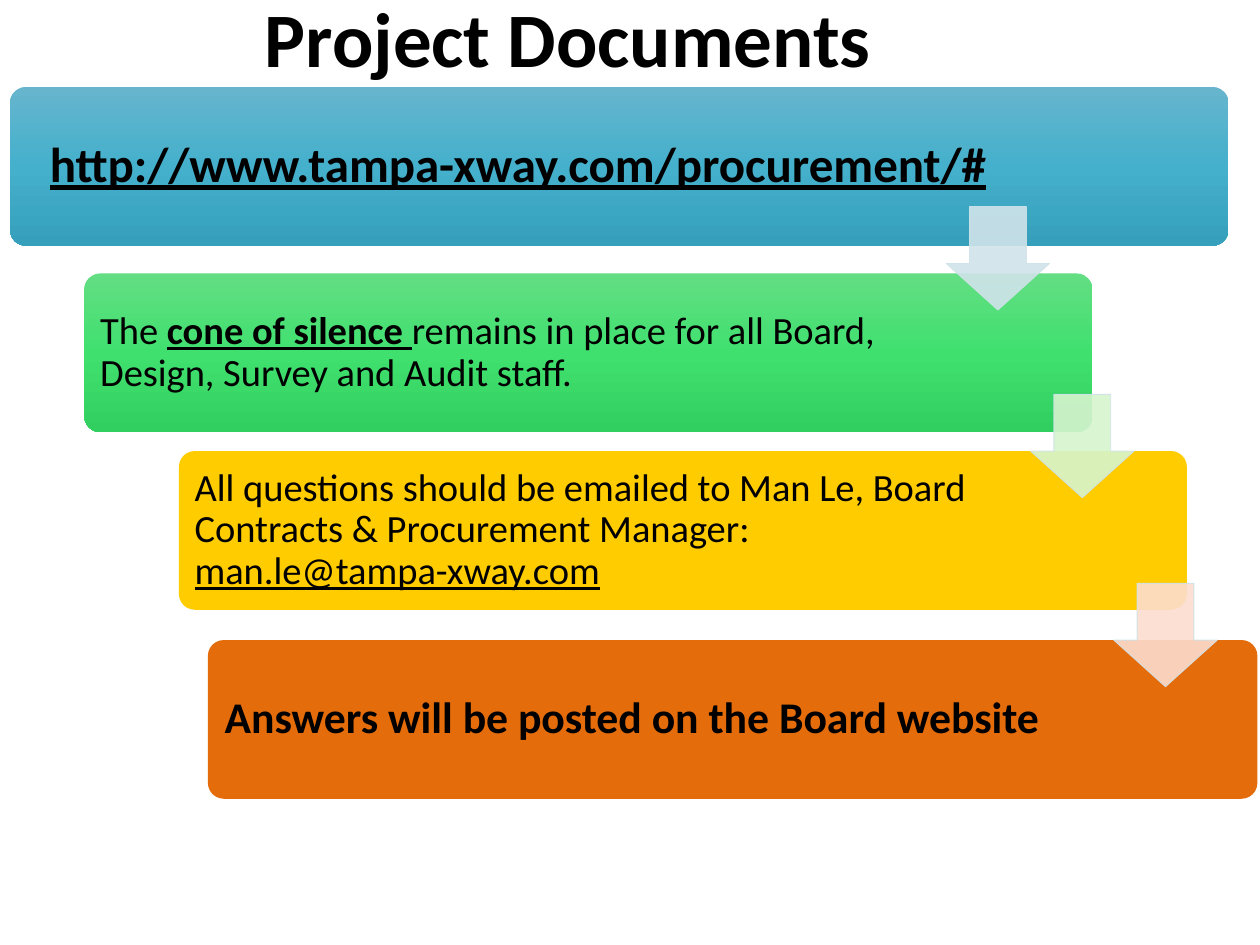
from copy import deepcopy

from lxml import etree
from pptx import Presentation
from pptx.dml.color import RGBColor
from pptx.enum.shapes import MSO_SHAPE
from pptx.enum.text import MSO_ANCHOR, PP_ALIGN
from pptx.oxml.ns import qn
from pptx.util import Inches, Pt

ROUND = MSO_SHAPE.ROUNDED_RECTANGLE
ARROW = MSO_SHAPE.DOWN_ARROW
TOP, MIDDLE = MSO_ANCHOR.TOP, MSO_ANCHOR.MIDDLE
LEFT, RIGHT = PP_ALIGN.LEFT, PP_ALIGN.RIGHT
FONT = "Calibri"
INK = "000000"
EDGE = "D0E3EA"
CARD_H = 1.26
INSET = 0.035
ARROW_SIZE = 0.82

CARDS = [
    dict(box=(0.08, 0.69, 9.67, CARD_H), wide=7.91, pad=0.12, size=28,
         fill=["66B5CD", "45B0CC", "36A0BC"], align=RIGHT, gap=0.2,
         runs=[("http://www.tampa-xway.com/procurement/#", True, True)]),
    dict(box=(0.67, 2.17, 8, CARD_H), wide=6.43, pad=0.09, size=22,
         fill=["63DE83", "40E06F", "31CF5F"],
         runs=[("The ", False, False), ("cone of silence ", True, True),
               ("remains in place for all Board, Design, Survey and Audit staff.",
                False, False)]),
    dict(box=(1.42, 3.58, 8, CARD_H), wide=6.44, pad=0.09, size=22,
         fill=["FFCC00"],
         runs=[("All questions should be emailed to Man Le, Board Contracts "
                "& Procurement Manager: ", False, False),
               ("man.le@tampa-xway.com", False, True)]),
    dict(box=(1.65, 5.08, 8.33, CARD_H), wide=6.7, pad=0.1, size=25,
         fill=["E46C0A"],
         runs=[("Answers will be posted on the Board website", True, False)]),
]
ARROWS = [(7.51, 1.64, "D0E3EA"), (8.18, 3.13, "D6F4CE"), (8.84, 4.63, "FCDDCF")]


def color(code):
    return RGBColor.from_string(code)


def place(shape, box):
    shape.left, shape.top, shape.width, shape.height = map(Inches, box)


def style(para, size, align):
    para.alignment = align
    para.line_spacing = 0.9
    para.font.name = FONT
    para.font.size = Pt(size)
    para.font.color.rgb = color(INK)


def paint(shape, codes):
    fill = shape.fill
    if len(codes) == 1:
        fill.solid()
        fill.fore_color.rgb = color(codes[0])
        return
    fill.gradient()
    fill.gradient_angle = 270
    stops = shape.element.spPr.find(".//" + qn("a:gsLst"))
    stops.insert(1, deepcopy(stops[0]))
    for i, (stop, code) in enumerate(zip(fill.gradient_stops, codes)):
        stop.position = i / (len(codes) - 1)
        stop.color.rgb = color(code)


def add_title(slide, box):
    title = slide.shapes.title
    place(title, box)
    frame = title.text_frame
    frame.word_wrap = True
    frame.vertical_anchor = TOP
    para = frame.paragraphs[0]
    para.text = "Project Documents"
    style(para, 44, LEFT)
    para.font.bold = True


def add_card(slide, box, wide, pad, size, fill, runs, align=LEFT, gap=None):
    x, y, w, h = box
    card = slide.shapes.add_shape(ROUND, *map(Inches, box))
    card.adjustments[0] = 0.1
    card.shadow.inherit = False
    card.line.fill.background()
    paint(card, fill)
    area = x + INSET, y + INSET, wide, h - 2 * INSET
    frame = slide.shapes.add_textbox(*map(Inches, area)).text_frame
    frame.word_wrap = True
    frame.vertical_anchor = MIDDLE
    frame.margin_left = frame.margin_top = frame.margin_bottom = Inches(pad)
    frame.margin_right = Inches(gap or pad)
    para = frame.paragraphs[0]
    style(para, size, align)
    for text, bold, under in runs:
        run = para.add_run()
        run.text = text
        run.font.bold = bold
        run.font.underline = under


def add_arrow(slide, box, code):
    arrow = slide.shapes.add_shape(ARROW, *map(Inches, box))
    arrow.adjustments[0] = 0.55
    arrow.adjustments[1] = 0.45
    arrow.shadow.inherit = False
    paint(arrow, [code])
    arrow.line.width = Pt(0.5)
    arrow.line.color.rgb = color(EDGE)
    for tone in arrow.element.spPr.iter(qn("a:srgbClr")):
        etree.SubElement(tone, qn("a:alpha")).set("val", "90000")


def main():
    deck = Presentation()
    deck.slide_width, deck.slide_height = Inches(10), Inches(7.5)
    slide = deck.slides.add_slide(deck.slide_layouts[5])
    add_title(slide, (2, -0.04, 8.62, 1.45))
    for card in CARDS:
        add_card(slide, **card)
    for x, y, code in ARROWS:
        add_arrow(slide, (x, y, ARROW_SIZE, ARROW_SIZE), code)
    deck.save("out.pptx")


if __name__ == "__main__":
    main()
